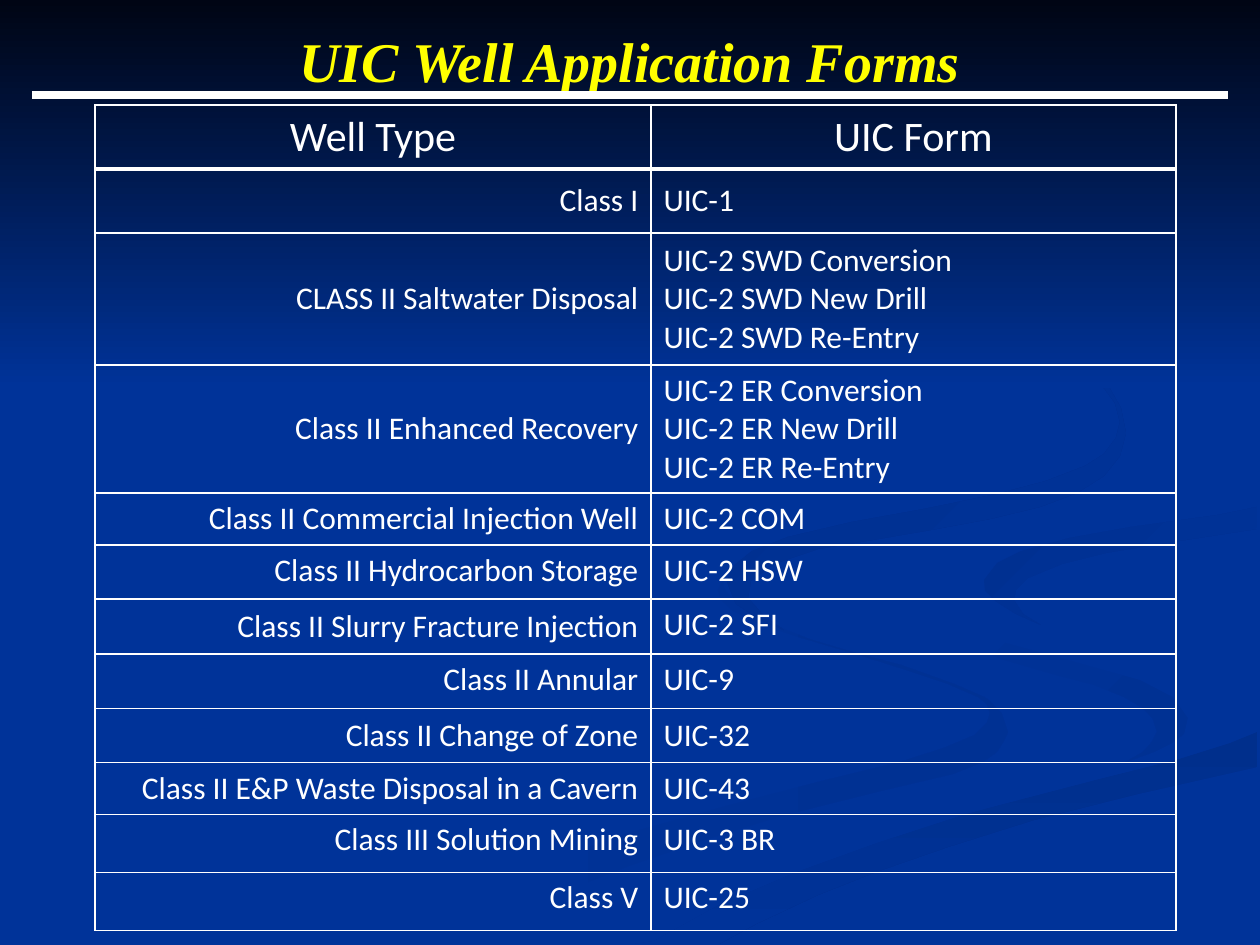
import pptx
import pptx.dml.color
import pptx.enum.shapes
import pptx.enum.text
import pptx.oxml
import pptx.oxml.ns
import pptx.util

ALIGN = pptx.enum.text.PP_ALIGN
ANCHOR = pptx.enum.text.MSO_ANCHOR
TOP, MIDDLE = ANCHOR.TOP, ANCHOR.MIDDLE
EMU_PER_PX = 914400 / 126
COLORS = {
    "background": "003399",
    "night": "000514",
    "shade_light": "003193",
    "shade_mid": "003091",
    "shade_deep": "002F8E",
    "shade_dark": "002F8C",
    "white": "FFFFFF",
    "title": "FFFF00",
}


def px(value):
    return pptx.util.Emu(round(value * EMU_PER_PX))


def color(name):
    return pptx.dml.color.RGBColor.from_string(COLORS[name])


class SlideBuilder:
    body_font = "Calibri"
    title_font = "Times New Roman"

    def __init__(self, presentation):
        self.slide = presentation.slides.add_slide(presentation.slide_layouts[6])
        self.shapes = self.slide.shapes

    def background(self, name):
        fill = self.slide.background.fill
        fill.solid()
        fill.fore_color.rgb = color(name)

    def paint(self, shape, start, end, angle):
        shape.shadow.inherit = False
        shape.line.fill.background()
        if start == end:
            shape.fill.solid()
            shape.fill.fore_color.rgb = color(start)
            return
        shape.fill.gradient()
        shape.fill.gradient_angle = (360 - angle) % 360
        for stop, name in zip(shape.fill.gradient_stops, (start, end)):
            stop.color.rgb = color(name)

    def swirl(self, points, start, end, angle=0):
        builder = self.shapes.build_freeform(*points[0], scale=EMU_PER_PX)
        builder.add_line_segments(points[1:], close=True)
        self.paint(builder.convert_to_shape(), start, end, angle)

    def rectangle(self, left, top, width, height, start, end, angle):
        shape = self.shapes.add_shape(
            pptx.enum.shapes.MSO_SHAPE.RECTANGLE,
            px(left), px(top), px(width), px(height))
        self.paint(shape, start, end, angle)

    def add_text(self, paragraph, text, size, name, font, align, emphasis=False):
        paragraph.alignment = align
        run = paragraph.add_run()
        run.text = text
        run.font.size = pptx.util.Pt(size)
        run.font.name = font
        run.font.bold = run.font.italic = emphasis
        run.font.color.rgb = color(name)

    def title(self, left, top, width, height, text):
        shape = self.shapes.add_textbox(px(left), px(top), px(width), px(height))
        frame = shape.text_frame
        frame.word_wrap = True
        frame.vertical_anchor = MIDDLE
        self.add_text(frame.paragraphs[0], text, 32, "title", self.title_font,
                      ALIGN.CENTER, True)

    def line(self, x1, y1, x2, y2, width):
        connector = self.shapes.add_connector(
            pptx.enum.shapes.MSO_CONNECTOR.STRAIGHT, px(x1), px(y1), px(x2), px(y2))
        connector.line.color.rgb = color("white")
        connector.line.width = pptx.util.Pt(width)
        properties = connector._element.spPr
        properties.append(properties.makeelement(pptx.oxml.ns.qn("a:effectLst"), {}))

    def cell(self, cell, lines, size, align, anchor, widths):
        properties = cell._tc.get_or_add_tcPr()
        for side, width in widths.items():
            properties.append(pptx.oxml.parse_xml(
                f'<a:ln{side} {pptx.oxml.ns.nsdecls("a")} w="{pptx.util.Pt(width)}">'
                f'<a:solidFill><a:srgbClr val="{COLORS["white"]}"/></a:solidFill>'
                f'</a:ln{side}>'))
        cell.fill.background()
        cell.vertical_anchor = anchor
        frame = cell.text_frame
        for index, text in enumerate(lines):
            paragraph = frame.add_paragraph() if index else frame.paragraphs[0]
            self.add_text(paragraph, text, size, "white", self.body_font, align)

    def table(self, left, top, column_widths, rows):
        heights = [row[0] for row in rows]
        table = self.shapes.add_table(
            len(rows), len(column_widths), px(left), px(top),
            px(sum(column_widths)), px(sum(heights))).table
        table.first_row = table.horz_banding = False
        for column, width in zip(table.columns, column_widths):
            column.width = px(width)
        for index, (height, anchors, *texts) in enumerate(rows):
            table.rows[index].height = px(height)
            header = index == 0
            aligns = (ALIGN.CENTER,) * 2 if header else (ALIGN.RIGHT, ALIGN.LEFT)
            widths = {"L": 1, "R": 1, "T": 3 if index == 1 else 1,
                      "B": 3 if header else 1}
            for column, text in enumerate(texts):
                self.cell(table.cell(index, column), text.split("\n"),
                          24 if header else 18, aligns[column], anchors[column], widths)


LOWER_EDGE = [
    (634, 944), (654, 941), (717, 906), (794, 873), (877, 843), (963, 815),
    (1004, 804), (1092, 781), (1179, 759), (1230, 743), (1257, 732)]

LEFT_SWIRL = [
    (984, 697), (954, 684), (901, 665), (859, 654), (809, 639), (774, 625),
    (748, 611), (735, 601), (726, 591), (723, 585), (724, 578), (718, 590),
    (721, 600), (732, 610), (759, 624), (795, 636), (856, 654), (900, 668),
    (948, 684), (978, 697), (987, 704), (990, 713), (987, 723), (975, 735),
    (944, 748), (900, 762), (822, 781), (730, 805), (629, 833), (525, 869),
    (426, 916), (378, 944), (455, 944), (543, 900), (629, 866), (711, 838),
    (785, 815), (881, 791), (953, 774), (983, 762), (997, 752), (1004, 741),
    (1008, 732), (1002, 714), (990, 701)]

INNER_SWIRL = [
    (1188, 718), (1183, 708), (1172, 697), (1140, 680), (1096, 668), (1046, 654),
    (998, 641), (955, 627), (924, 609), (912, 585), (916, 604), (931, 622),
    (965, 645), (1004, 660), (1056, 675), (1094, 685), (1124, 697), (1143, 708),
    (1153, 719), (1157, 732), (1152, 742), (1143, 752), (1126, 762), (1154, 752),
    (1174, 742), (1186, 732)]

LOWER_BAND = [
    (719, 944), (756, 924), (818, 895), (876, 872), (948, 847), (1034, 820),
    (1138, 794), (1257, 767)] + LOWER_EDGE[::-1]

RIBBON = [
    (914, 585), (925, 609), (956, 627), (999, 641), (1047, 654), (1097, 668),
    (1140, 680), (1173, 697), (1188, 718), (1184, 735), (1167, 747), (1137, 760),
    (1095, 770), (1023, 788), (936, 810), (835, 842), (722, 886), (601, 944),
    *LOWER_EDGE, (1259, 678), (1208, 669), (1139, 654), (1068, 634), (1029, 620),
    (1000, 605), (984, 583), (998, 563), (1036, 547), (1090, 534), (1176, 523),
    (1259, 507), (1259, 488), (1212, 498), (1159, 505), (1072, 518), (993, 532),
    (951, 544), (922, 562)]

RIGHT_CURL = [
    (984, 580), (985, 591), (997, 602), (1016, 614), (1041, 625), (1023, 614),
    (1014, 600), (1016, 590), (1028, 578), (1062, 564), (1106, 553), (1179, 541),
    (1257, 529), (1257, 507), (1218, 515), (1131, 527), (1070, 538), (1021, 551),
    (997, 563)]

UPPER_CURL = [
    (861, 542), (931, 530), (990, 519), (1040, 507), (1077, 493), (1104, 476),
    (1120, 456), (1126, 433), (1121, 408), (1109, 387), (1089, 367), (1062, 347),
    (1021, 323), (983, 304), (960, 294), (1014, 320), (1066, 352), (1096, 377),
    (1115, 403), (1120, 422), (1116, 438), (1104, 454), (1085, 466), (1046, 481),
    (997, 494), (924, 509), (852, 522), (788, 537), (752, 551), (731, 568),
    (727, 582), (736, 604), (761, 620), (784, 630), (765, 617), (748, 598),
    (751, 581), (774, 564), (818, 549)]

WELL_FORMS = [
    (63, (MIDDLE, MIDDLE), "Well Type", "UIC Form"),
    (64, (MIDDLE, MIDDLE), "Class I", "UIC-1"),
    (132, (MIDDLE, MIDDLE), "CLASS II Saltwater Disposal",
     "UIC-2 SWD Conversion\nUIC-2 SWD New Drill\nUIC-2 SWD Re-Entry"),
    (128, (MIDDLE, MIDDLE), "Class II Enhanced Recovery",
     "UIC-2 ER Conversion\nUIC-2 ER New Drill\nUIC-2 ER Re-Entry"),
    (52, (MIDDLE, MIDDLE), "Class II Commercial Injection Well", "UIC-2 COM"),
    (54, (TOP, TOP), "Class II Hydrocarbon Storage", "UIC-2 HSW"),
    (55, (MIDDLE, TOP), "Class II Slurry Fracture Injection", "UIC-2 SFI"),
    (55, (TOP, TOP), "Class II Annular", "UIC-9"),
    (54, (MIDDLE, MIDDLE), "Class II Change of Zone", "UIC-32"),
    (52, (TOP, TOP), "Class II E&P Waste Disposal in a Cavern", "UIC-43"),
    (58, (TOP, TOP), "Class III Solution Mining", "UIC-3 BR"),
    (58, (TOP, TOP), "Class V", "UIC-25")]


def main():
    presentation = pptx.Presentation()
    presentation.slide_width, presentation.slide_height = px(1260), px(945)
    builder = SlideBuilder(presentation)
    builder.background("background")
    builder.swirl(LEFT_SWIRL, "background", "shade_light")
    builder.swirl(INNER_SWIRL, "background", "shade_light", 45)
    builder.swirl(LOWER_BAND, "shade_dark", "background", 90)
    builder.swirl(RIBBON, "background", "background")
    builder.swirl(RIGHT_CURL, "shade_mid", "background", 45)
    builder.swirl(UPPER_CURL, "shade_deep", "background", 45)
    builder.rectangle(0, 0, 1260, 388, "night", "background", 90)
    builder.table(95, 105, (556, 525), WELL_FORMS)
    builder.title(63, 16, 1134, 88, "UIC Well Application Forms")
    builder.line(32, 95, 1228, 95, 4.5)
    presentation.save("out.pptx")


if __name__ == "__main__":
    main()
